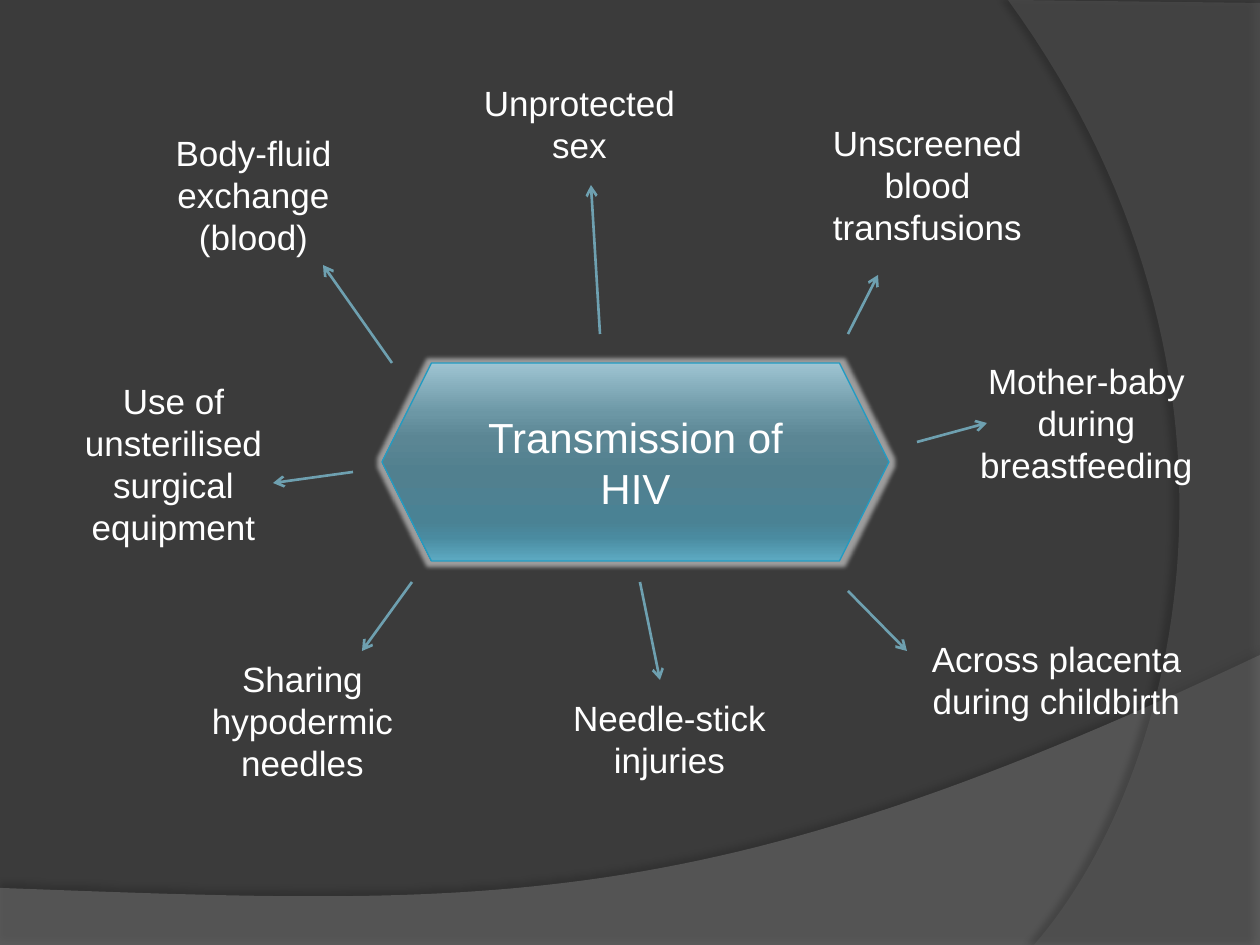
from lxml import etree
from pptx import Presentation
from pptx.dml.color import RGBColor
from pptx.enum.shapes import MSO_CONNECTOR, MSO_SHAPE
from pptx.enum.text import MSO_ANCHOR, MSO_AUTO_SIZE, PP_ALIGN
from pptx.oxml import parse_xml
from pptx.oxml.ns import qn
from pptx.util import Emu, Pt

STRAIGHT = MSO_CONNECTOR.STRAIGHT
HEXAGON = MSO_SHAPE.HEXAGON
MIDDLE = MSO_ANCHOR.MIDDLE
GROW = MSO_AUTO_SIZE.SHAPE_TO_FIT_TEXT
CENTER = PP_ALIGN.CENTER

SCALE = 914400 / 126
NAMESPACE = 'xmlns:a="http://schemas.openxmlformats.org/drawingml/2006/main"'
FONT = "Arial"
COLORS = {
    "background": "3B3B3B", "bottom": "7F7F7F", "side": "5E5E5E",
    "shadow": "000000", "text": "FFFFFF", "glow": "FFFFFF",
    "outline": "239BC2", "arrow": "6EA0B0",
}
GRADIENT = [(0, "9EC4D2"), (25, "6C97A5"), (38, "5B8694"), (55, "51808F"),
            (80, "4A8294"), (88, "4A8BA0"), (100, "5DAAC2")]
LABEL_WIDTH = 277
LINE_HEIGHT = 42
LABEL_PADDING = 13
CAUSES = [
    ("Body-fluid exchange (blood)", 3, (115, 125), (392, 363), (323, 265)),
    ("Unprotected sex", 2, (441, 75), (600, 334), (591, 185)),
    ("Unscreened blood transfusions", 3, (789, 115), (848, 334), (878, 275)),
    ("Mother-baby during breastfeeding", 3, (948, 353), (917, 442), (987, 423)),
    ("Across placenta during childbirth", 2, (918, 631), (848, 591), (907, 651)),
    ("Needle-stick injuries", 2, (531, 690), (640, 582), (660, 680)),
    ("Sharing hypodermic needles", 3, (164, 651), (412, 582), (362, 651)),
    ("Use of unsterilised surgical equipment", 4, (35, 373), (353, 472), (273, 483)),
]


def px(*lengths):
    """Turn px lengths into EMU."""
    return [Emu(round(length * SCALE)) for length in lengths]


def rgb(name):
    """Look up a named colour."""
    return RGBColor.from_string(COLORS[name])


def curve(start, first, second, end, steps=60):
    """Return points along a cubic Bezier curve."""
    points = []
    for step in range(steps + 1):
        t = step / steps
        weights = ((1 - t) ** 3, 3 * t * (1 - t) ** 2, 3 * t * t * (1 - t), t ** 3)
        points.append(tuple(
            sum(weight * point[axis] for weight, point in zip(weights, (start, first, second, end)))
            for axis in (0, 1)))
    return points


def set_effect(shape, content):
    """Give a shape an effect list holding the given XML."""
    shape.shadow.inherit = False
    effects = shape._element.spPr.find(qn("a:effectLst"))
    effects.append(parse_xml(content))


def format_text(shape, text, size):
    """Write centred text into a shape."""
    frame = shape.text_frame
    frame.word_wrap = True
    frame.text = text
    paragraph = frame.paragraphs[0]
    paragraph.alignment = CENTER
    font = paragraph.runs[0].font
    font.name, font.size = FONT, Pt(size)
    font.color.rgb = rgb("text")


def add_sweep(slide, points, color, opacity, shadow_opacity, distance, direction):
    """Add a translucent curved background panel."""
    corners = [px(*point) for point in points]
    builder = slide.shapes.build_freeform(*corners[0])
    builder.add_line_segments(corners[1:], close=True)
    shape = builder.convert_to_shape()
    shape.fill.solid()
    shape.fill.fore_color.rgb = rgb(color)
    fill_color = shape._element.spPr.find(qn("a:solidFill"))[0]
    etree.SubElement(fill_color, qn("a:alpha"), val=str(opacity * 1000))
    shape.line.fill.background()
    set_effect(shape, (
        f'<a:outerShdw {NAMESPACE} blurRad="{Pt(4)}" dist="{Pt(distance)}" '
        f'dir="{direction * 60000}" algn="ctr" rotWithShape="0">'
        f'<a:srgbClr val="{COLORS["shadow"]}"><a:alpha val="{shadow_opacity * 1000}"/>'
        '</a:srgbClr></a:outerShdw>'))


def add_background(slide, width, height):
    """Add the dark background and its two sweeping panels."""
    slide.background.fill.solid()
    slide.background.fill.fore_color.rgb = rgb("background")
    bottom = [(0, height + 1), (width, height + 1)]
    bottom += curve((width, 655), (704, 919), (493, 906), (0, 888))
    add_sweep(slide, bottom, "bottom", 45, 35, 3.5, 270)
    side = [(width, 3), (width, height)]
    side += curve((1034, height), (1178, 780), (1283, 378), (1008, 0))
    add_sweep(slide, side, "side", 40, 45, 4, 180)


def add_topic(slide, left, top, width, height):
    """Add the glowing central hexagon."""
    shape = slide.shapes.add_shape(HEXAGON, *px(left, top, width, height))
    shape.fill.gradient()
    shape.fill.gradient_angle = 270
    stops = shape._element.spPr.find(qn("a:gradFill")).find(qn("a:gsLst"))
    for stop in list(stops):
        stops.remove(stop)
    for position, color in GRADIENT:
        stop = etree.SubElement(stops, qn("a:gs"), pos=str(position * 1000))
        etree.SubElement(stop, qn("a:srgbClr"), val=color)
    shape.line.color.rgb = rgb("outline")
    shape.line.width = Pt(0.75)
    set_effect(shape, (
        f'<a:glow {NAMESPACE} rad="{Pt(5)}"><a:srgbClr val="{COLORS["glow"]}">'
        '<a:alpha val="50000"/></a:srgbClr></a:glow>'))
    format_text(shape, "Transmission of HIV", 24)
    shape.text_frame.vertical_anchor = MIDDLE


def add_label(slide, text, lines, left, top):
    """Add one cause as a text box sized for its line count."""
    height = lines * LINE_HEIGHT + LABEL_PADDING
    box = slide.shapes.add_textbox(*px(left, top, LABEL_WIDTH, height))
    format_text(box, text, 20)
    box.text_frame.auto_size = GROW


def add_arrow(slide, start, end):
    """Add an arrow pointing from the topic to a cause."""
    connector = slide.shapes.add_connector(STRAIGHT, *px(*start, *end))
    connector.line.color.rgb = rgb("arrow")
    connector.line.width = Pt(1.5)
    etree.SubElement(connector.line._get_or_add_ln(), qn("a:tailEnd"), type="arrow")
    etree.SubElement(connector._element.spPr, qn("a:effectLst"))


def main():
    """Build and save the presentation."""
    presentation = Presentation()
    width, height = 1260, 945
    presentation.slide_width, presentation.slide_height = px(width, height)
    slide = presentation.slides.add_slide(presentation.slide_layouts[6])
    add_background(slide, width, height)
    add_topic(slide, 382, 363, 507, 198)
    for text, lines, corner, start, end in CAUSES:
        add_label(slide, text, lines, *corner)
        add_arrow(slide, start, end)
    presentation.save("out.pptx")


if __name__ == "__main__":
    main()
